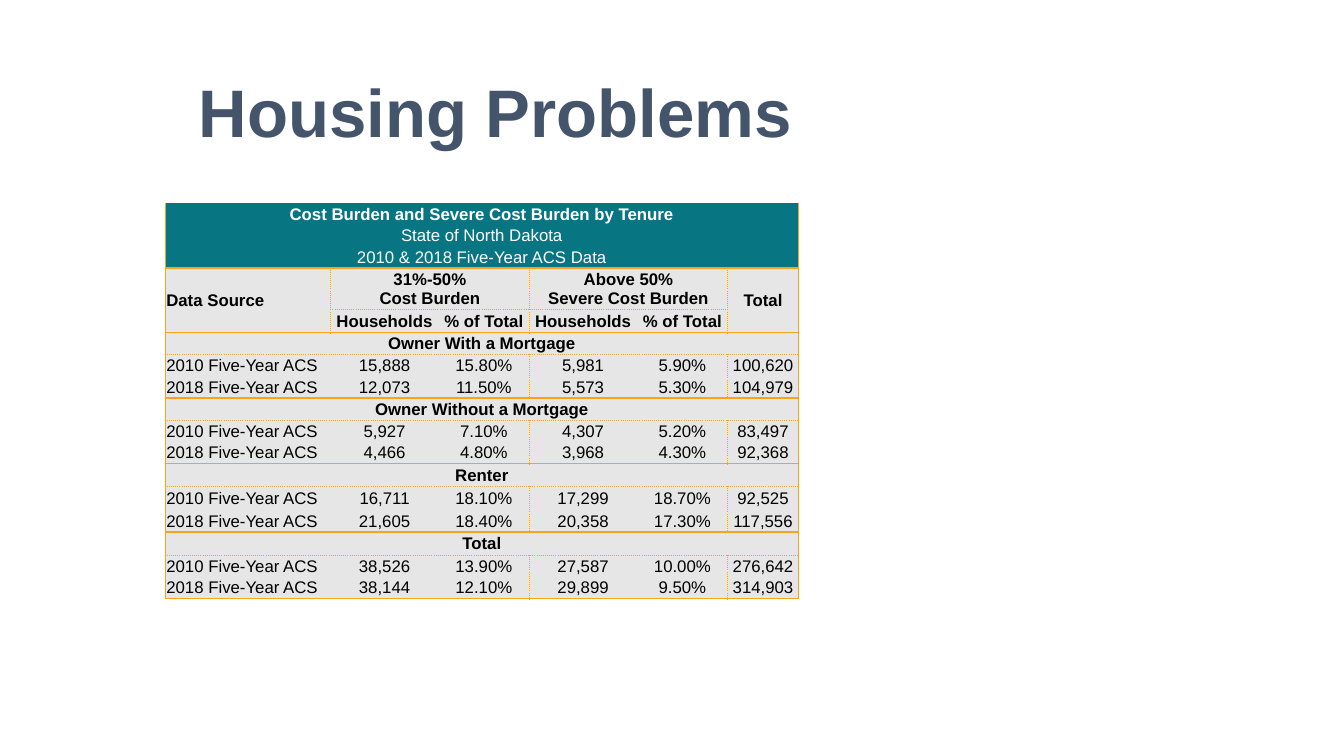
from collections import namedtuple

from lxml.etree import SubElement
from pptx import Presentation
from pptx.dml.color import RGBColor
from pptx.enum.text import MSO_ANCHOR as Anchor, PP_ALIGN as Align
from pptx.oxml.ns import qn
from pptx.util import Inches, Pt

SLATE = RGBColor(0x44, 0x54, 0x6A)
TEAL = RGBColor(0x08, 0x75, 0x82)
GREY = RGBColor(0xE7, 0xE6, 0xE6)
ORANGE = RGBColor(0xFA, 0xA2, 0x1A)
WHITE = RGBColor(0xFF, 0xFF, 0xFF)
BLACK = RGBColor(0x00, 0x00, 0x00)
FONT = "Arial"
PLAIN_STYLE = "{2D5ABB26-0587-4C30-8999-92F81FD0307C}"

Box = namedtuple("Box", "left top width height")
Edge = namedtuple("Edge", "points dash")
DOTTED = Edge(0.5, "sysDot")
SOLID = Edge(1, "solid")
HEAVY = Edge(2, "solid")

CAPTION = [
    "Cost Burden and Severe Cost Burden by Tenure",
    "State of North Dakota",
    "2010 & 2018 Five-Year ACS Data",
]
GROUPS = ["Data Source", "31%-50%\nCost Burden", None,
          "Above 50%\nSevere Cost Burden", None, "Total"]
MEASURES = [None] + ["Households", "% of Total"] * 2 + [None]
SOURCES = ["2010 Five-Year ACS", "2018 Five-Year ACS"]
TENURES = {
    "Owner With a Mortgage": [
        ["15,888", "15.80%", "5,981", "5.90%", "100,620"],
        ["12,073", "11.50%", "5,573", "5.30%", "104,979"],
    ],
    "Owner Without a Mortgage": [
        ["5,927", "7.10%", "4,307", "5.20%", "83,497"],
        ["4,466", "4.80%", "3,968", "4.30%", "92,368"],
    ],
    "Renter": [
        ["16,711", "18.10%", "17,299", "18.70%", "92,525"],
        ["21,605", "18.40%", "20,358", "17.30%", "117,556"],
    ],
    "Total": [
        ["38,526", "13.90%", "27,587", "10.00%", "276,642"],
        ["38,144", "12.10%", "29,899", "9.50%", "314,903"],
    ],
}
COLUMN_WEIGHTS = [1.64, 1.07, 0.9, 1.07, 0.9, 0.7]
ROW_WEIGHTS = [0.22, 0.21, 0.22, 0.41, 0.23, 0.22, 0.21, 0.22, 0.22,
               0.21, 0.22, 0.23, 0.23, 0.22, 0.23, 0.21, 0.22]
GROUP_ROW = len(CAPTION)
MEASURE_ROW = GROUP_ROW + 1
COLUMN_EDGES = [SOLID, None, None, DOTTED, None, DOTTED, SOLID]
ROW_EDGES = ([None] * GROUP_ROW + [SOLID, DOTTED, SOLID]
             + [DOTTED, None, SOLID] * 2 + [DOTTED, None, HEAVY]
             + [DOTTED, None, SOLID])


def percent_box(deck, left, top, width, height):
    across, down = deck.slide_width / 100, deck.slide_height / 100
    return Box(round(left * across), round(top * down),
               round(width * across), round(height * down))


def add_span(para, text, size, color, bold):
    span = para.add_run()
    span.text = text
    span.font.name = FONT
    span.font.size = Pt(size)
    span.font.bold = bold
    span.font.color.rgb = color


def place_title(page, box, text):
    title = page.shapes.title
    title.left, title.top, title.width, title.height = box
    frame = title.text_frame
    frame.word_wrap = True
    frame.vertical_anchor = Anchor.TOP
    frame.margin_top = Inches(0.37)
    para = frame.paragraphs[0]
    para.alignment = Align.CENTER
    para.line_spacing = 1.0
    para.space_before = Pt(0)
    add_span(para, text, 48, SLATE, True)


def set_edge(cell, side, edge):
    properties = cell._tc.get_or_add_tcPr()
    line = SubElement(properties, qn(f"a:ln{side}"))
    if edge is None:
        line.set("w", "0")
        SubElement(line, qn("a:noFill"))
        return
    line.set("w", str(Pt(edge.points)))
    fill = SubElement(line, qn("a:solidFill"))
    SubElement(fill, qn("a:srgbClr")).set("val", str(ORANGE))
    SubElement(line, qn("a:prstDash")).set("val", edge.dash)


def format_cell(cell, row, column, text):
    verticals = list(COLUMN_EDGES)
    if row == GROUP_ROW:
        verticals[1] = DOTTED
    set_edge(cell, "L", verticals[column])
    set_edge(cell, "R", verticals[column + cell.span_width])
    set_edge(cell, "T", ROW_EDGES[row])
    set_edge(cell, "B", ROW_EDGES[row + cell.span_height])
    in_caption = row < GROUP_ROW
    cell.fill.solid()
    cell.fill.fore_color.rgb = TEAL if in_caption else GREY
    cell.vertical_anchor = Anchor.MIDDLE
    cell.margin_left = cell.margin_right = cell.margin_top = Inches(0.01)
    cell.margin_bottom = 0
    is_label = column == 0 and cell.span_width == 1
    is_section = row > MEASURE_ROW and cell.span_width > 1
    bold = row in (0, GROUP_ROW, MEASURE_ROW) or is_section
    frame = cell.text_frame
    for index, line in enumerate(text.split("\n")):
        para = frame.add_paragraph() if index else frame.paragraphs[0]
        para.alignment = Align.LEFT if is_label else Align.CENTER
        add_span(para, line, 12, WHITE if in_caption else BLACK, bold)


def table_rows():
    blanks = [None] * (len(COLUMN_WEIGHTS) - 1)
    rows = [[line] + blanks for line in CAPTION] + [GROUPS, MEASURES]
    for tenure, records in TENURES.items():
        rows.append([tenure] + blanks)
        rows += [[source] + record for source, record in zip(SOURCES, records)]
    return rows


def place_table(page, box, rows):
    holder = page.shapes.add_table(len(rows), len(COLUMN_WEIGHTS), *box)
    table = holder.table
    table.first_row = table.horz_banding = False
    for style in holder.element.iter(qn("a:tableStyleId")):
        style.text = PLAIN_STYLE
    for column, weight in zip(table.columns, COLUMN_WEIGHTS):
        column.width = round(box.width * weight / sum(COLUMN_WEIGHTS))
    for row, weight in zip(table.rows, ROW_WEIGHTS):
        row.height = round(box.height * weight / sum(ROW_WEIGHTS))
    last = len(COLUMN_WEIGHTS) - 1
    for index, texts in enumerate(rows):
        if not any(texts[1:]):
            table.cell(index, 0).merge(table.cell(index, last))
    for column in (0, last):
        table.cell(GROUP_ROW, column).merge(table.cell(MEASURE_ROW, column))
    for column in (1, 3):
        table.cell(GROUP_ROW, column).merge(table.cell(GROUP_ROW, column + 1))
    for index, texts in enumerate(rows):
        for column, text in enumerate(texts):
            if text:
                format_cell(table.cell(index, column), index, column, text)


def main():
    deck = Presentation()
    deck.slide_width, deck.slide_height = Inches(13.33), Inches(7.5)
    page = deck.slides.add_slide(deck.slide_layouts[5])
    place_title(page, percent_box(deck, 2.1, 4.4, 69.54, 92.67), "Housing Problems")
    place_table(page, percent_box(deck, 12.3, 26.8, 47.11, 52.4), table_rows())
    deck.save("out.pptx")


if __name__ == "__main__":
    main()
